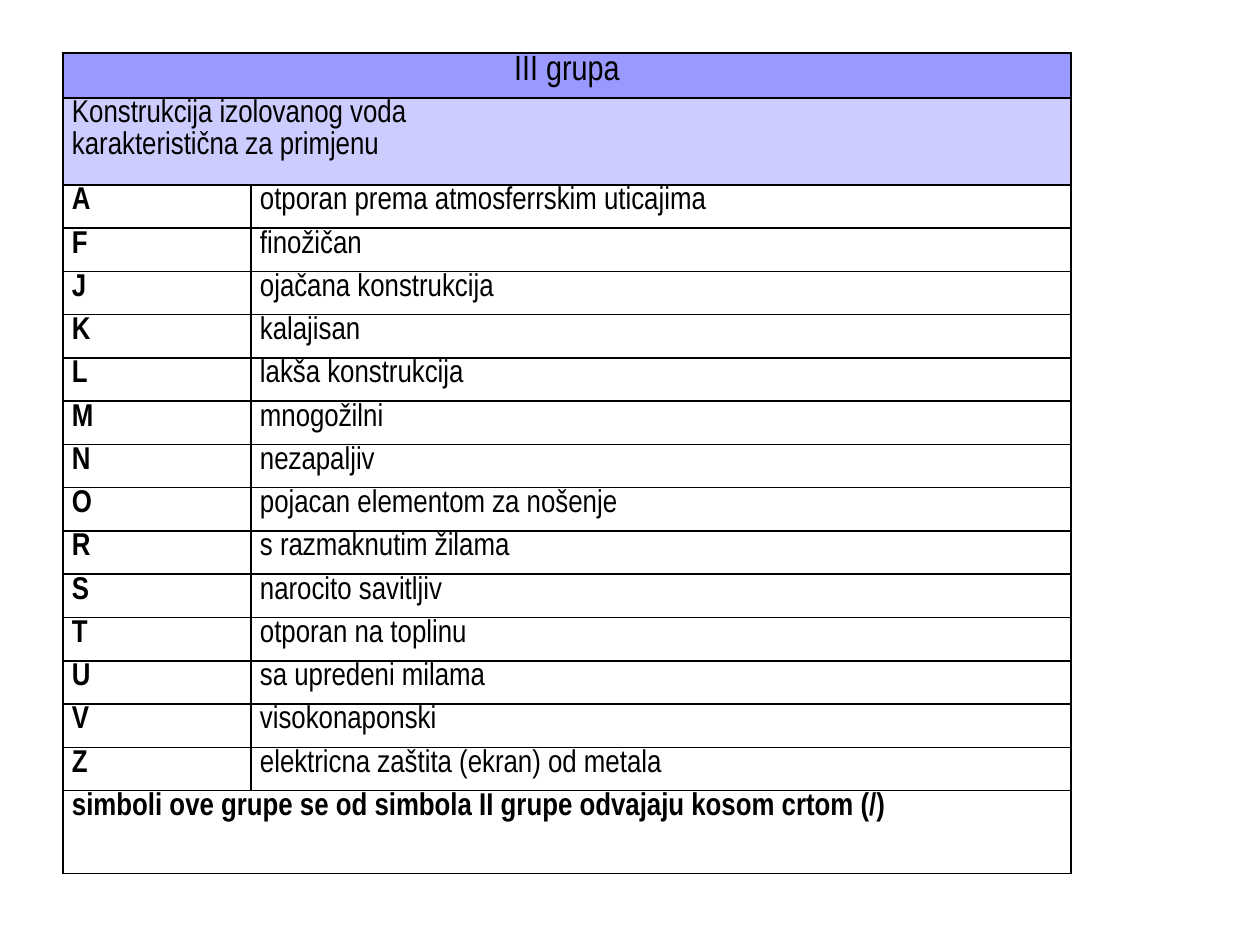
from lxml import etree
from pptx import Presentation
from pptx.dml.color import RGBColor
from pptx.enum.text import PP_ALIGN
from pptx.oxml.ns import qn
from pptx.util import Pt

PX = 914400 // 126
LEFT, CENTER = PP_ALIGN.LEFT, PP_ALIGN.CENTER
BLACK = RGBColor(0x00, 0x00, 0x00)
TITLE_FILL = RGBColor(0x99, 0x99, 0xFF)
SUBTITLE_FILL = RGBColor(0xCC, 0xCC, 0xFF)

TITLE = "III grupa"
SUBTITLE = "Konstrukcija izolovanog voda\nkarakteristična za primjenu"
FOOTER = "simboli ove grupe se od simbola II grupe odvajaju kosom crtom (/)"
SYMBOLS = [
    ("A", "otporan prema atmosferrskim uticajima"),
    ("F", "finožičan"),
    ("J", "ojačana konstrukcija"),
    ("K", "kalajisan"),
    ("L", "lakša konstrukcija"),
    ("M", "mnogožilni"),
    ("N", "nezapaljiv"),
    ("O", "pojacan elementom za nošenje"),
    ("R", "s razmaknutim žilama"),
    ("S", "narocito savitljiv"),
    ("T", "otporan na toplinu"),
    ("U", "sa upredeni milama"),
    ("V", "visokonaponski"),
    ("Z", "elektricna zaštita (ekran) od metala"),
]


def add_borders(cell):
    """Draw a black one-point line on each side of the cell."""
    properties = cell._tc.get_or_add_tcPr()
    for side in ("a:lnL", "a:lnR", "a:lnT", "a:lnB"):
        line = etree.SubElement(properties, qn(side), w=str(Pt(1)))
        fill = etree.SubElement(line, qn("a:solidFill"))
        etree.SubElement(fill, qn("a:srgbClr"), val=str(BLACK))


def format_cell(cell, text, fill=None, size=18, bold=False, alignment=LEFT):
    """Write the text into the cell and set its borders, fill and font."""
    add_borders(cell)
    margins = {"margin_left": 9, "margin_right": 9, "margin_top": 0, "margin_bottom": 0}
    for name, value in margins.items():
        setattr(cell, name, value * PX)
    if fill is None:
        cell.fill.background()
    else:
        cell.fill.solid()
        cell.fill.fore_color.rgb = fill
    cell.text = text
    font_values = {"name": "Arial Narrow", "size": Pt(size), "bold": bold}
    for paragraph in cell.text_frame.paragraphs:
        paragraph.alignment = alignment
        paragraph.line_spacing = 1.07
        for run in paragraph.runs:
            for name, value in font_values.items():
                setattr(run.font, name, value)
            run.font.color.rgb = BLACK


def add_symbol_table(slide, left, top, width, height):
    """Place the table of symbols and their meanings in the given box."""
    title_height, subtitle_height, footer_height, symbol_width = 45, 87, 83, 188
    last = len(SYMBOLS) + 2
    box = [length * PX for length in (left, top, width, height)]
    table = slide.shapes.add_table(last + 1, 2, *box).table
    table.first_row = table.horz_banding = False
    table.columns[0].width = symbol_width * PX
    table.columns[1].width = (width - symbol_width) * PX

    fixed_rows = {0: title_height, 1: subtitle_height, last: footer_height}
    symbol_height = (height - sum(fixed_rows.values())) * PX // len(SYMBOLS)
    for index, row in enumerate(table.rows):
        row.height = fixed_rows[index] * PX if index in fixed_rows else symbol_height

    spanning_rows = {
        0: {"text": TITLE, "fill": TITLE_FILL, "size": 20, "alignment": CENTER},
        1: {"text": SUBTITLE, "fill": SUBTITLE_FILL},
        last: {"text": FOOTER, "bold": True},
    }
    for index, values in spanning_rows.items():
        table.cell(index, 0).merge(table.cell(index, 1))
        format_cell(table.cell(index, 0), **values)
        add_borders(table.cell(index, 1))
    for index, (symbol, meaning) in enumerate(SYMBOLS, start=2):
        format_cell(table.cell(index, 0), symbol, bold=True)
        format_cell(table.cell(index, 1), meaning)


def main():
    """Build the slide and save the presentation."""
    presentation = Presentation()
    presentation.slide_width = 1260 * PX
    presentation.slide_height = 945 * PX
    slide = presentation.slides.add_slide(presentation.slide_layouts[6])
    add_symbol_table(slide, 63, 53, 1008, 821)
    presentation.save("out.pptx")


if __name__ == "__main__":
    main()
